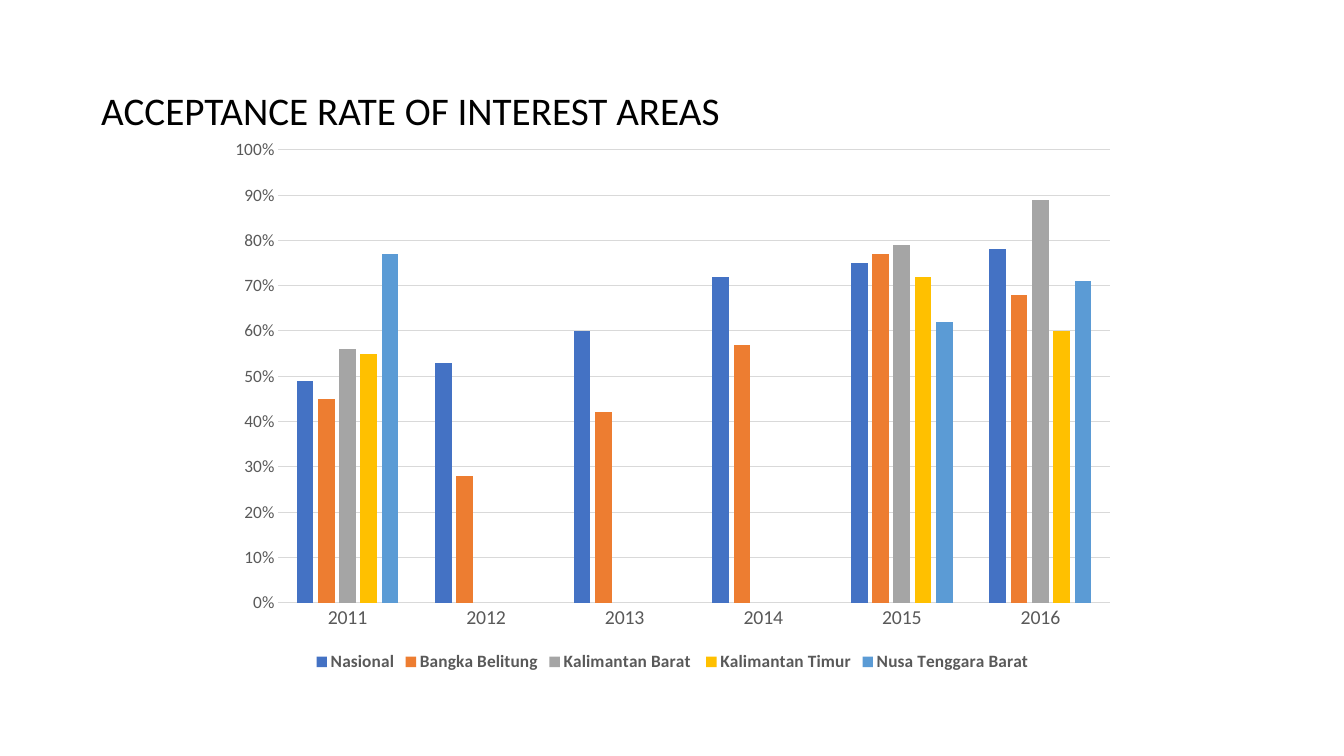
from dataclasses import dataclass

from pptx import Presentation
from pptx.chart.axis import CategoryAxis, ValueAxis
from pptx.chart.data import CategoryChartData
from pptx.dml.color import RGBColor
from pptx.dml.line import LineFormat
from pptx.enum.chart import XL_CHART_TYPE, XL_LEGEND_POSITION, XL_TICK_MARK
from pptx.enum.text import MSO_ANCHOR
from pptx.slide import Slide
from pptx.text.text import Font
from pptx.util import Cm, Pt

FACE = "Calibri"
COLORS = {
    "title": "000000",
    "label": "595959",
    "grid": "D9D9D9",
    "blue": "4472C4",
    "orange": "ED7D31",
    "gray": "A5A5A5",
    "gold": "FFC000",
    "sky": "5B9BD5",
}
YEARS = ["2011", "2012", "2013", "2014", "2015", "2016"]


@dataclass
class Area:
    name: str
    color: str
    rates: list[float | None]


AREAS = [
    Area("Nasional", "blue", [0.49, 0.53, 0.6, 0.72, 0.75, 0.78]),
    Area("Bangka Belitung", "orange", [0.45, 0.28, 0.42, 0.57, 0.77, 0.68]),
    Area("Kalimantan Barat ", "gray", [0.56, None, None, None, 0.79, 0.89]),
    Area("Kalimantan Timur", "gold", [0.55, None, None, None, 0.72, 0.6]),
    Area("Nusa Tenggara Barat", "sky", [0.77, None, None, None, 0.62, 0.71]),
]


def color(key: str) -> RGBColor:
    return RGBColor.from_string(COLORS[key])


def set_font(font: Font, size: float, key: str, bold: bool = False) -> None:
    font.name = FACE
    font.size = Pt(size)
    font.bold = bold
    font.color.rgb = color(key)


def set_line(line: LineFormat) -> None:
    line.color.rgb = color("grid")
    line.width = Pt(0.75)


def set_axis(axis: CategoryAxis | ValueAxis, size: float) -> None:
    axis.major_tick_mark = XL_TICK_MARK.NONE
    axis.minor_tick_mark = XL_TICK_MARK.NONE
    set_font(axis.tick_labels.font, size, "label")


def add_title(slide: Slide, text: str) -> None:
    box = slide.shapes.add_textbox(Cm(2.64), Cm(1.14), Cm(33.1), Cm(4.17))
    frame = box.text_frame
    frame.word_wrap = True
    frame.vertical_anchor = MSO_ANCHOR.MIDDLE
    para = frame.paragraphs[0]
    para.line_spacing = 0.9
    run = para.add_run()
    run.text = text
    set_font(run.font, 31.7, "title")


def add_rates(slide: Slide) -> None:
    """Draw the clustered columns, one series per area."""
    data = CategoryChartData(number_format="0%")
    data.categories = YEARS
    for area in AREAS:
        data.add_series(area.name, area.rates)
    chart = slide.shapes.add_chart(
        XL_CHART_TYPE.COLUMN_CLUSTERED,
        Cm(6.2), Cm(3.66), Cm(26.01), Cm(15.65), data,
    ).chart
    chart.has_title = False
    set_font(chart.font, 10, "title")

    plot = chart.plots[0]
    plot.gap_width = 219
    plot.overlap = -27
    plot.vary_by_categories = False
    for area, series in zip(AREAS, plot.series):
        series.format.fill.solid()
        series.format.fill.fore_color.rgb = color(area.color)
        series.invert_if_negative = False

    set_axis(chart.category_axis, 16)
    set_line(chart.category_axis.format.line)

    scale = chart.value_axis
    set_axis(scale, 14)
    scale.minimum_scale = 0
    scale.maximum_scale = 1
    scale.major_unit = 0.1
    scale.tick_labels.number_format = "0%"
    scale.tick_labels.number_format_is_linked = False
    scale.format.line.fill.background()
    set_line(scale.major_gridlines.format.line)

    chart.has_legend = True
    chart.legend.position = XL_LEGEND_POSITION.BOTTOM
    chart.legend.include_in_layout = False
    set_font(chart.legend.font, 14, "label", bold=True)


def main() -> None:
    deck = Presentation()
    deck.slide_width = Cm(38.38)
    deck.slide_height = Cm(21.59)
    slide = deck.slides.add_slide(deck.slide_layouts[6])
    add_title(slide, "ACCEPTANCE RATE OF INTEREST AREAS")
    add_rates(slide)
    deck.save("out.pptx")


if __name__ == "__main__":
    main()
